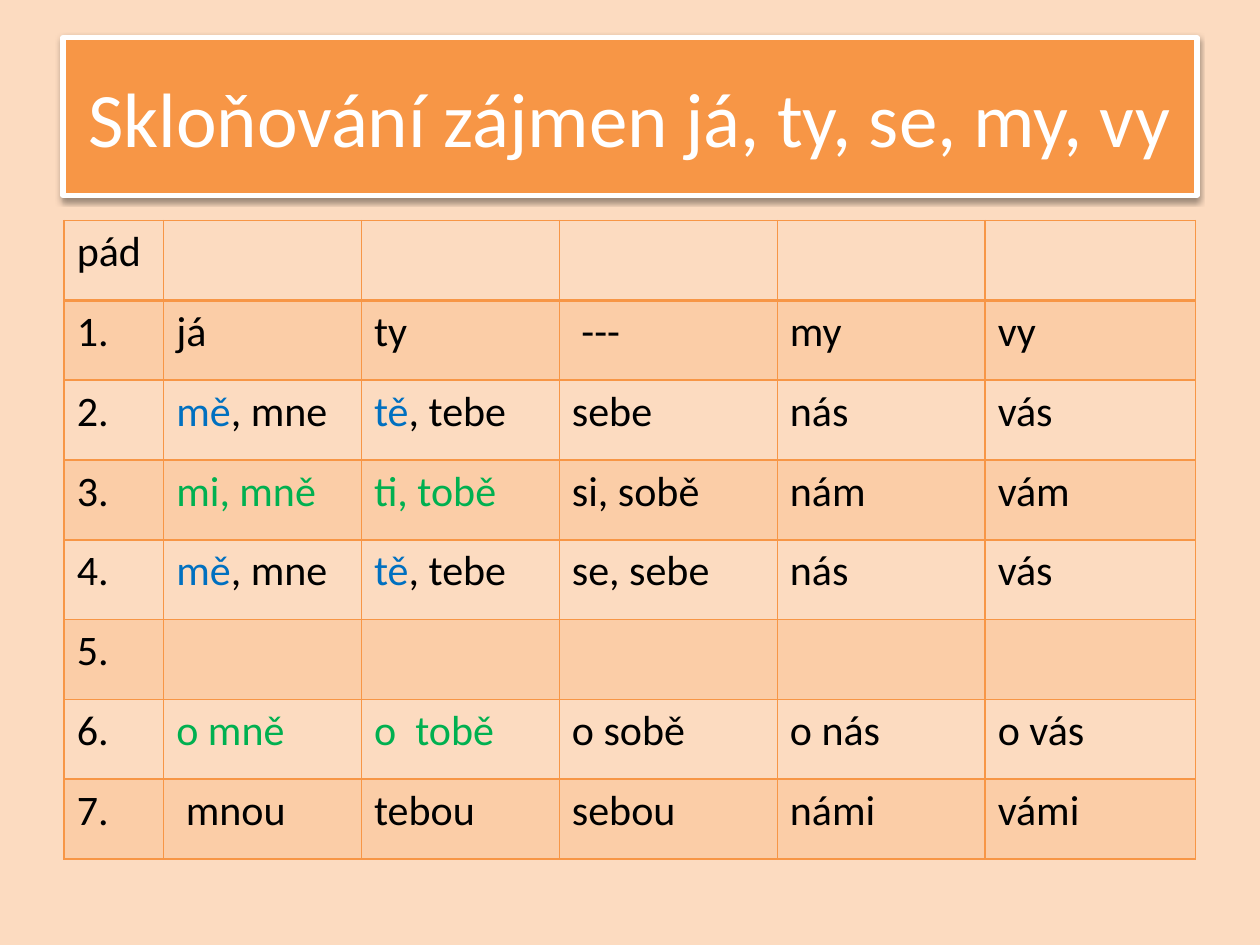
"""Build a slide with a declension table of Czech personal pronouns."""
from lxml.etree import SubElement
from pptx import Presentation
from pptx.dml.color import RGBColor
from pptx.enum.text import MSO_ANCHOR, MSO_AUTO_SIZE, PP_ALIGN
from pptx.oxml.ns import qn
from pptx.util import Inches, Pt

COLORS = {
    "background": "FCDBC0",
    "accent": "F79646",
    "white": "FFFFFF",
    "black": "000000",
    "blue": "0070C0",
    "green": "00B050",
}
COLUMN_WIDTHS = [0.79, 1.57, 1.57, 1.73, 1.65, 1.67]
ME = [("mě", "blue"), (", mne", "black")]
YOU = [("tě", "blue"), (", tebe", "black")]
ROWS = [
    ["pád", "", "", "", "", ""],
    ["1.", "já", "ty", " ---", "my", "vy"],
    ["2.", ME, YOU, "sebe", "nás", "vás"],
    ["3.", [("mi, mně", "green")], [("ti, tobě", "green")], "si, sobě", "nám", "vám"],
    ["4.", ME, YOU, "se, sebe", "nás", "vás"],
    ["5.", "", "", "", "", ""],
    ["6.", [("o mně", "green")], [("o  tobě", "green")], "o sobě", "o nás", "o vás"],
    ["7.", " mnou", "tebou", "sebou", "námi", "vámi"],
]


class SlideBuilder:
    """Hold the style and the current slide."""

    font_name = "Calibri"

    def __init__(self, presentation):
        """Add a title-only slide with a plain background."""
        self.slide = presentation.slides.add_slide(presentation.slide_layouts[5])
        self.fill(self.slide.background, "background")

    def color(self, name):
        """Return a named colour."""
        return RGBColor.from_string(COLORS[name])

    def fill(self, target, name):
        """Fill a shape, cell or background with a named colour."""
        target.fill.solid()
        target.fill.fore_color.rgb = self.color(name)

    def add_run(self, paragraph, text, size, color):
        """Add a formatted run to a paragraph."""
        run = paragraph.add_run()
        run.text = text
        formats = {"name": self.font_name, "size": Pt(size), "bold": False}
        for key, value in formats.items():
            setattr(run.font, key, value)
        run.font.color.rgb = self.color(color)

    def add_title(self, text, left, top, width, height):
        """Place the title as a filled, framed box with a soft shadow."""
        title = self.slide.shapes.title
        box = {"left": left, "top": top, "width": width, "height": height}
        for key, value in box.items():
            setattr(title, key, Inches(value))
        self.fill(title, "accent")
        title.line.color.rgb = self.color("white")
        title.line.width = Pt(3)
        self.add_shadow(title)
        frame = title.text_frame
        formats = {
            "word_wrap": True,
            "auto_size": MSO_AUTO_SIZE.NONE,
            "vertical_anchor": MSO_ANCHOR.MIDDLE,
        }
        for key, value in formats.items():
            setattr(frame, key, value)
        paragraph = frame.paragraphs[0]
        paragraph.alignment = PP_ALIGN.CENTER
        self.add_run(paragraph, text, 44, "white")

    def add_shadow(self, shape):
        """Give a shape a shadow that falls straight down."""
        shape.shadow.inherit = False
        effects = shape.element.spPr.find(qn("a:effectLst"))
        shadow = SubElement(
            effects, qn("a:outerShdw"), blurRad=str(Pt(3.1)), dist=str(Pt(1.6)),
            dir="5400000", rotWithShape="0",
        )
        color = SubElement(shadow, qn("a:srgbClr"), val=COLORS["black"])
        SubElement(color, qn("a:alpha"), val="38000")

    def add_border(self, cell, side, width):
        """Draw one side of a cell in the accent colour."""
        properties = cell._tc.get_or_add_tcPr()
        line = SubElement(properties, qn(f"a:ln{side}"), w=str(Pt(width)))
        solid = SubElement(line, qn("a:solidFill"))
        SubElement(solid, qn("a:srgbClr"), val=COLORS["accent"])

    def add_cell(self, cell, content, row_index):
        """Write a cell and give it its borders and band."""
        widths = {"L": 1, "R": 1, "T": 2 if row_index == 1 else 1,
                  "B": 2 if row_index == 0 else 1}
        for side, width in widths.items():
            self.add_border(cell, side, width)
        if row_index % 2:
            self.fill(cell, "accent")
            color = cell._tc.tcPr.find(f"{qn('a:solidFill')}/{qn('a:srgbClr')}")
            SubElement(color, qn("a:alpha"), val="20000")
        else:
            cell.fill.background()
        runs = [(content, "black")] if isinstance(content, str) else content
        for text, name in runs:
            if text:
                self.add_run(cell.text_frame.paragraphs[0], text, 24, name)

    def add_table(self, rows, column_widths, left, top, height):
        """Add a table with equal rows."""
        table = self.slide.shapes.add_table(
            len(rows), len(column_widths), Inches(left), Inches(top),
            Inches(sum(column_widths)), Inches(height),
        ).table
        table.first_row = table.horz_banding = False
        for column, width in zip(table.columns, column_widths):
            column.width = Inches(width)
        for row_index, (row, contents) in enumerate(zip(table.rows, rows)):
            row.height = Inches(height / len(rows))
            for cell, content in zip(row.cells, contents):
                self.add_cell(cell, content, row_index)


def main():
    """Build and save the presentation."""
    presentation = Presentation()
    presentation.slide_width = Inches(10)
    presentation.slide_height = Inches(7.5)
    builder = SlideBuilder(presentation)
    builder.add_title("Skloňování zájmen já, ty, se, my, vy", 0.5, 0.3, 9, 1.25)
    builder.add_table(ROWS, COLUMN_WIDTHS, 0.51, 1.75, 5.07)
    presentation.save("out.pptx")


if __name__ == "__main__":
    main()
